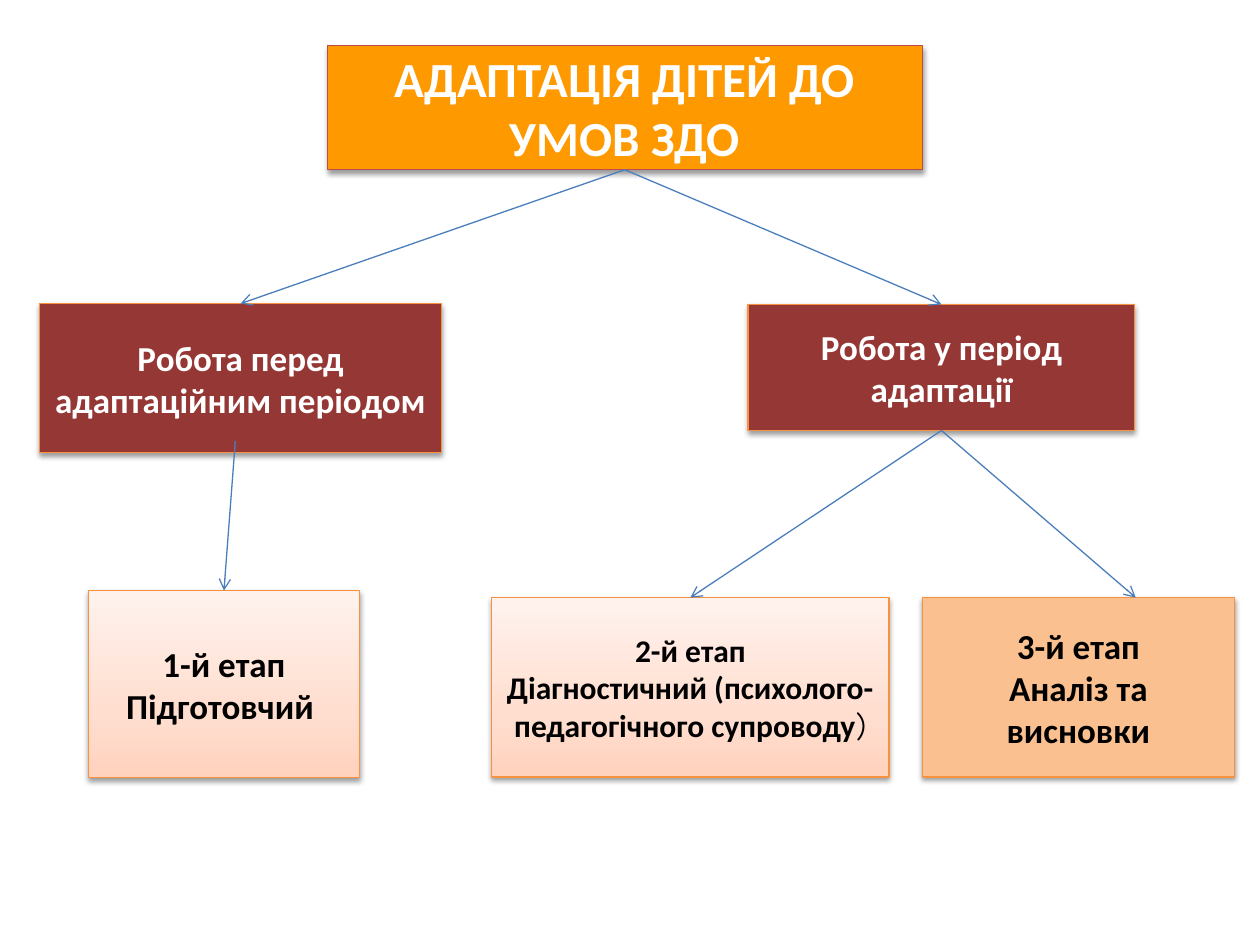
from copy import deepcopy

from lxml.etree import SubElement
from pptx import Presentation
from pptx.dml.color import RGBColor as RGB
from pptx.enum.shapes import MSO_CONNECTOR as CONN, MSO_SHAPE as SHAPE
from pptx.enum.text import MSO_ANCHOR as ANCHOR, MSO_AUTO_SIZE as AUTO, PP_ALIGN as ALIGN
from pptx.oxml.ns import qn
from pptx.util import Pt

COLORS = {
    "title": "FF9900", "title_line": "BF4C48", "period": "953735",
    "border": "F69240", "stage": "FAC090", "arrow": "4B7EBC",
    "white": "FFFFFF", "black": "000000",
}
PEACH = ((0, "FFD2BD"), (0.35, "FFDED0"), (1, "FFF2ED"))


def rgb(name):
    """Return the named colour."""
    return RGB.from_string(COLORS[name])


def fill_peach(sp):
    """Fill a shape with the three-stop peach gradient, darkest at the bottom."""
    sp.fill.gradient()
    sp.fill.gradient_angle = 90
    stops = sp._element.spPr.find(qn("a:gradFill")).find(qn("a:gsLst"))
    stops.append(deepcopy(stops[-1]))
    for stop, (pos, color) in zip(sp.fill.gradient_stops, PEACH):
        stop.position = pos
        stop.color.rgb = RGB.from_string(color)


def add_shadow(sp):
    """Give a shape a soft shadow below it."""
    sp.shadow.inherit = False
    effects = sp._element.spPr.find(qn("a:effectLst"))
    shadow = SubElement(effects, qn("a:outerShdw"), blurRad=str(Pt(3.1)),
                        dist=str(Pt(1.6)), dir="5400000", rotWithShape="0")
    color = SubElement(shadow, qn("a:srgbClr"), val=COLORS["black"])
    SubElement(color, qn("a:alpha"), val="38000")


def style_box(sp, text, size, fill, color, line="border"):
    """Write centred bold text in a shape and style its surface."""
    if fill == "peach":
        fill_peach(sp)
    else:
        sp.fill.solid()
        sp.fill.fore_color.rgb = rgb(fill)
    sp.line.color.rgb = rgb(line)
    sp.line.width = Pt(0.75)
    add_shadow(sp)
    tf = sp.text_frame
    tf.text = text
    tf.word_wrap = True
    tf.auto_size = AUTO.NONE
    tf.vertical_anchor = ANCHOR.MIDDLE
    for p in tf.paragraphs:
        p.alignment = ALIGN.CENTER
        for r in p.runs:
            style_run(r, size, color)


def style_run(r, size, color, name="Calibri", bold=True):
    """Set the font of a run."""
    r.font.name = name
    r.font.size = Pt(size)
    r.font.bold = bold
    r.font.color.rgb = rgb(color)


def add_box(slide, box, *style):
    """Add a styled rectangle."""
    sp = slide.shapes.add_shape(SHAPE.RECTANGLE, *map(Pt, box))
    style_box(sp, *style)
    return sp


def add_arrow(slide, start, end):
    """Add a thin arrow between two points."""
    line = slide.shapes.add_connector(CONN.STRAIGHT, *map(Pt, start + end))
    line.line.color.rgb = rgb("arrow")
    line.line.width = Pt(0.75)
    SubElement(line.line._get_or_add_ln(), qn("a:tailEnd"), type="arrow")
    SubElement(line._element.spPr, qn("a:effectLst"))


def add_title(slide, box):
    """Place the title and return the middle of its lower edge."""
    sp = slide.shapes.title
    sp.left, sp.top, sp.width, sp.height = map(Pt, box)
    style_box(sp, "АДАПТАЦІЯ ДІТЕЙ ДО УМОВ ЗДО", 28, "title", "white", "title_line")
    x, y, w, h = box
    return x + w / 2, y + h


def add_before_period(slide, box, root):
    """Draw the branch of work before the adaptation period."""
    x, y, w, h = box
    add_box(slide, (x, y, w, 85), "Робота перед адаптаційним періодом", 20, "period", "white")
    stage_y, stage_h = y + 164, 107
    add_box(slide, (x + 28, stage_y, 155, stage_h),
            "1-й етап\nПідготовчий ", 20, "peach", "black")
    add_arrow(slide, root, (x + w / 2, y))
    add_arrow(slide, (x + 112, y + 78.5), (x + 28 + 155 / 2, stage_y))


def add_during_period(slide, box, root):
    """Draw the branch of work during the adaptation period."""
    x, y, w, h = box
    node_x, node_w, node_h = x + 146.5, 221, 72
    mid = node_x + node_w / 2
    add_box(slide, (node_x, y, node_w, node_h), "Робота у період адаптації", 20, "period", "white")
    stage_y, stage_h = y + 167.5, 102.5
    sp = add_box(slide, (x, stage_y, 227, stage_h),
                 "2-й етап\nДіагностичний (психолого-педагогічного супроводу",
                 18, "peach", "black")
    r = sp.text_frame.paragraphs[-1].add_run()
    r.text = ")"
    style_run(r, 18, "black", "Comic Neue", False)
    add_box(slide, (x + w - 178.5, stage_y, 178.5, stage_h),
            "3-й етап\nАналіз та висновки", 20, "stage", "black")
    add_arrow(slide, root, (mid, y))
    for end_x in (x + 227 / 2, x + 368):
        add_arrow(slide, (mid, y + node_h), (end_x, stage_y))


def main():
    """Build the slide."""
    prs = Presentation()
    prs.slide_width, prs.slide_height = Pt(720), Pt(540)
    slide = prs.slides.add_slide(prs.slide_layouts[5])
    root = add_title(slide, (187, 26, 340, 71))
    add_before_period(slide, (22.5, 173.5, 230, 271), root)
    add_during_period(slide, (281, 174, 424.5, 270), root)
    prs.save("out.pptx")


if __name__ == "__main__":
    main()
